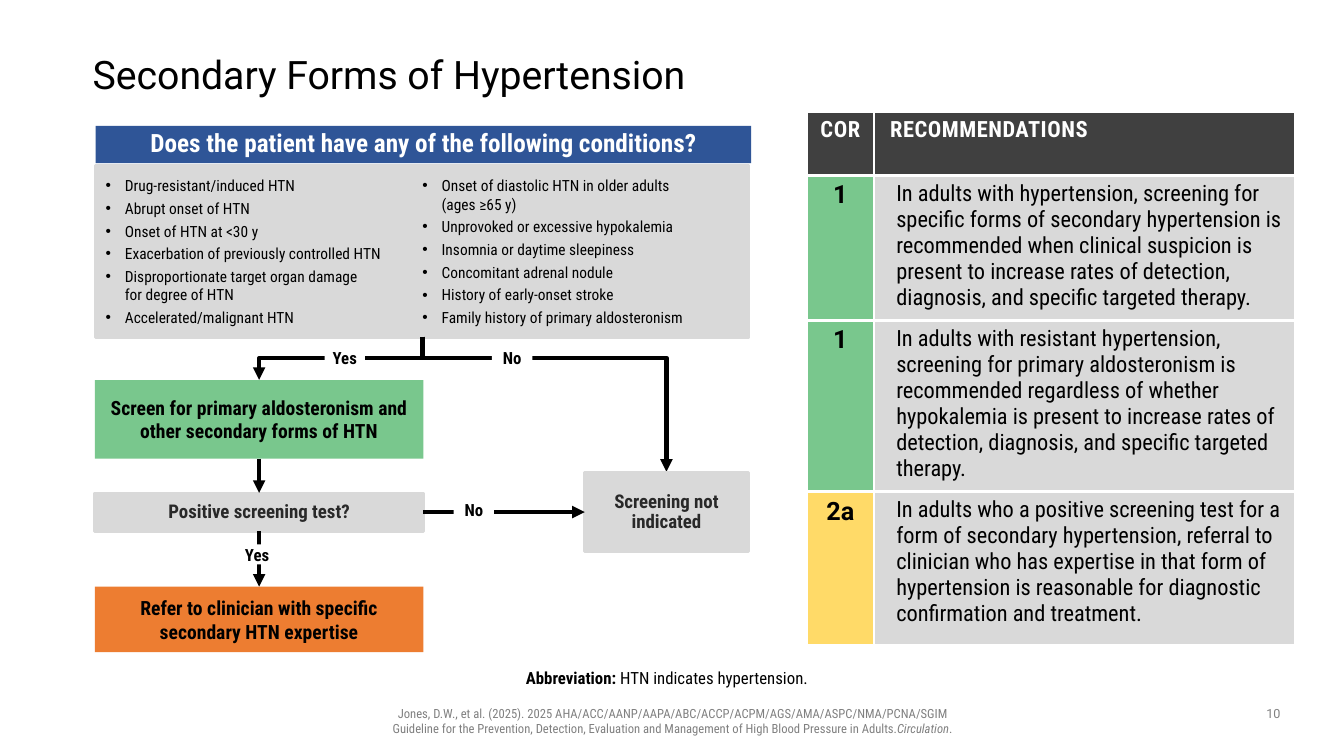
from lxml import etree
from pptx import Presentation
from pptx.dml.color import RGBColor
from pptx.enum import shapes, text
from pptx.oxml import ns
from pptx.util import Inches, Pt

COLORS = {
    "black": "000000", "white": "FFFFFF", "ink": "292929", "muted": "808080",
    "gray": "D9D9D9", "dark": "404040", "blue": "2F5597", "green": "79C78D",
    "orange": "ED7D31", "yellow": "FFDA68",
}
CENTER, LEFT = text.PP_ALIGN.CENTER, text.PP_ALIGN.LEFT
TOP, MIDDLE, BOTTOM = (text.MSO_ANCHOR.TOP, text.MSO_ANCHOR.MIDDLE,
                       text.MSO_ANCHOR.BOTTOM)
DEFAULT_INSETS = (0.1, 0.05, 0.1, 0.05)
NO_INSETS = (0, 0, 0, 0)


def color(name):
    return RGBColor.from_string(COLORS[name])


def add_xml(parent, tag, **attributes):
    return etree.SubElement(parent, ns.qn(tag), attributes)


class SlideBuilder:
    heading_font = "Roboto"
    body_font = "Roboto Condensed"

    def __init__(self, page):
        self.page = page

    def style(self, font, size, ink="black", bold=False, face=None):
        font.name = face or self.body_font
        font.size, font.bold = Pt(size), bold
        font.color.rgb = color(ink)

    def frame(self, frame, anchor=MIDDLE, insets=DEFAULT_INSETS):
        frame.word_wrap = True
        frame.vertical_anchor = anchor
        (frame.margin_left, frame.margin_top,
         frame.margin_right, frame.margin_bottom) = map(Inches, insets)

    def put_text(self, para, words, size, align=CENTER, spacing=None, **look):
        para.text = words
        para.alignment = align
        if spacing:
            para.line_spacing = spacing
        self.style(para.font, size, **look)

    def text_box(self, place, anchor=TOP, insets=DEFAULT_INSETS):
        box = self.page.shapes.add_textbox(*map(Inches, place))
        self.frame(box.text_frame, anchor, insets)
        return box.text_frame.paragraphs[0]

    def rectangle(self, place, fill, outline=False, anchor=MIDDLE,
                  insets=DEFAULT_INSETS):
        box = self.page.shapes.add_shape(
            shapes.MSO_SHAPE.RECTANGLE, *map(Inches, place))
        box.shadow.inherit = False
        box.fill.solid()
        box.fill.fore_color.rgb = color(fill)
        if outline:
            box.line.color.rgb = color(fill)
            box.line.width = Pt(2)
        else:
            box.line.fill.background()
        self.frame(box.text_frame, anchor, insets)
        return box

    def step(self, place, fill, words, size, spacing=None, outline=False,
             insets=DEFAULT_INSETS, anchor=MIDDLE, **look):
        box = self.rectangle(place, fill, outline, anchor, insets)
        self.put_text(box.text_frame.paragraphs[0], words, size,
                      spacing=spacing, bold=True, **look)
        return box

    def label(self, left, top, words):
        self.step((left, top, 0.4, 0.2), "white", words, 12,
                  insets=NO_INSETS, anchor=TOP)

    def bullets(self, box, items):
        frame = box.text_frame
        frame._txBody.bodyPr.set("numCol", "2")
        for index, item in enumerate(items):
            para = frame.add_paragraph() if index else frame.paragraphs[0]
            para.space_after = Pt(3)
            props = para._p.get_or_add_pPr()
            props.set("marL", str(Inches(0.19)))
            props.set("indent", str(-Inches(0.19)))
            add_xml(props, "a:buFont", typeface="Arial")
            add_xml(props, "a:buChar", char="•")
            self.put_text(para, item, 11, LEFT)

    def connector(self, kind, start, end):
        line = self.page.shapes.add_connector(
            kind, *map(Inches, (*start, *end)))
        line.line.color.rgb = color("black")
        line.line.width = Pt(3)
        add_xml(line.line._get_or_add_ln(), "a:tailEnd", type="triangle")
        add_xml(line._element.spPr, "a:effectLst")
        return line

    def arrow(self, source, source_side, target, target_side):
        line = self.connector(shapes.MSO_CONNECTOR.STRAIGHT, (0, 0), (1, 1))
        line.begin_connect(source, source_side)
        line.end_connect(target, target_side)

    def branch(self, start, end, bend):
        """Elbow that leaves downwards, runs sideways and ends downwards."""
        line = self.connector(shapes.MSO_CONNECTOR.ELBOW, start, end)
        run, drop = end[0] - start[0], end[1] - start[1]
        line.left = Inches((start[0] + end[0] - drop) / 2)
        line.top = Inches((start[1] + end[1] - abs(run)) / 2)
        line.width, line.height = Inches(drop), Inches(abs(run))
        properties = line._element.spPr
        frame = properties.find(ns.qn("a:xfrm"))
        for flip in ("flipH", "flipV"):
            frame.attrib.pop(flip, None)
        frame.set("rot", str((90 if run < 0 else 270) * 60000))
        if run > 0:
            frame.set("flipH", "1")
        guides = properties.find(".//" + ns.qn("a:avLst"))
        add_xml(guides, "a:gd", name="adj1", fmla=f"val {round(bend * 100000)}")

    def cell(self, cell, fill, words, size, indent=0, tracking=0,
             insets=(0.05,) * 4, **look):
        props = cell._tc.get_or_add_tcPr()
        for side in ("a:lnL", "a:lnR", "a:lnT", "a:lnB"):
            edge = add_xml(props, side, w=str(Pt(2.25)))
            paint = add_xml(edge, "a:solidFill")
            add_xml(paint, "a:srgbClr", val=COLORS["white"])
        cell.fill.solid()
        cell.fill.fore_color.rgb = color(fill)
        self.frame(cell.text_frame, MIDDLE, insets)
        para = cell.text_frame.paragraphs[0]
        self.put_text(para, words, size, **look)
        para._p.get_or_add_pPr().set("marL", str(Inches(indent)))
        if tracking:
            para.runs[0]._r.get_or_add_rPr().set("spc", str(tracking))

    def recommendations(self, place, widths, heights, rows):
        table = self.page.shapes.add_table(
            len(rows) + 1, 2, *map(Inches, place)).table
        table.first_row = table.horz_banding = False
        for column, width in zip(table.columns, widths):
            column.width = Inches(width)
        for row, height in zip(table.rows, heights):
            row.height = Inches(height)
        heading = dict(size=16, ink="white", bold=True,
                       insets=(0.1, 0.09, 0.1, 0.05))
        self.cell(table.cell(0, 0), "dark", "COR", tracking=50, **heading)
        self.cell(table.cell(0, 1), "dark", "RECOMMENDATIONS", indent=0.06,
                  tracking=40, align=LEFT, **heading)
        for index, (grade, fill, advice) in enumerate(rows, 1):
            self.cell(table.cell(index, 0), fill, grade, 18, bold=True,
                      face=self.heading_font)
            self.cell(table.cell(index, 1), "gray", advice, 16, indent=0.12,
                      align=LEFT)


CONDITIONS = [
    "Drug-resistant/induced HTN", "Abrupt onset of HTN", "Onset of HTN at <30 y",
    "Exacerbation of previously controlled HTN",
    "Disproportionate target organ damage\vfor degree of HTN",
    "Accelerated/malignant HTN",
    "Onset of diastolic HTN in older adults\v(ages ≥65 y)",
    "Unprovoked or excessive hypokalemia", "Insomnia or daytime sleepiness",
    "Concomitant adrenal nodule", "History of early-onset stroke",
    "Family history of primary aldosteronism",
]
ADVICE = [
    ("1", "green", "In adults with hypertension, screening for specific forms of secondary hypertension is recommended when clinical suspicion is present to increase rates of detection, diagnosis, and specific targeted therapy."),
    ("1", "green", "In adults with resistant hypertension, screening for primary aldosteronism is recommended regardless of whether hypokalemia is present to increase rates of detection, diagnosis, and specific targeted therapy."),
    ("2a", "yellow", "In adults who a positive screening test for a form of secondary hypertension, referral to clinician who has expertise in that form of hypertension is reasonable for diagnostic confirmation and treatment."),
]


def main():
    deck = Presentation()
    deck.slide_width, deck.slide_height = Inches(13.33), Inches(7.5)
    slide = SlideBuilder(deck.slides.add_slide(deck.slide_layouts[6]))

    # Title
    slide.put_text(slide.text_box((0.92, 0.4, 11.5, 0.72), MIDDLE, NO_INSETS),
                   "Secondary Forms of Hypertension", 28, LEFT, 0.9,
                   face=slide.heading_font)

    # Conditions
    conditions = slide.rectangle((0.95, 1.64, 6.48, 1.71), "gray", True,
                                 insets=(0.1,) * 4)
    slide.bullets(conditions, CONDITIONS)
    slide.step((0.95, 1.25, 6.5, 0.37), "blue",
               "Does the patient have any of the following conditions?", 18,
               0.9, insets=NO_INSETS, ink="white")

    # Flowchart
    slide.branch((4.19, 3.34), (2.57, 3.77), 0.5)
    slide.branch((4.19, 3.34), (6.61, 4.68), 0.158)
    screen = slide.step(
        (0.94, 3.77, 3.26, 0.78), "green",
        "Screen for primary aldosteronism and other secondary forms of HTN", 14)
    question = dict(size=13.5, spacing=0.9, outline=True, insets=NO_INSETS,
                    ink="ink")
    excluded = slide.step((5.8, 4.69, 1.62, 0.78), "gray",
                          "Screening not indicated", **question)
    positive = slide.step((0.94, 4.89, 3.26, 0.38), "gray",
                          "Positive screening test?", **question)
    refer = slide.step(
        (0.94, 5.82, 3.26, 0.65), "orange",
        "Refer to clinician with specific secondary HTN expertise", 14)
    slide.arrow(screen, 2, positive, 0)
    slide.arrow(positive, 2, refer, 0)
    slide.arrow(positive, 3, excluded, 1)
    for left, top, answer in [(3.22, 3.45, "Yes"), (4.88, 3.45, "No"),
                              (2.35, 5.4, "Yes"), (4.5, 4.96, "No")]:
        slide.label(left, top, answer)

    # Recommendations
    slide.recommendations((8, 1.11, 4.85, 5.29), (0.67, 4.18),
                          (0.63, 1.44, 1.7, 1.52), ADVICE)

    # Abbreviation, citation and page number
    note = slide.text_box((1.88, 6.42, 9.57, 0.46), BOTTOM, (0, 0.05, 0.1, 0.05))
    note.alignment, note.line_spacing = CENTER, 0.9
    for words, bold in [("Abbreviation: ", True),
                        ("HTN indicates hypertension.", False)]:
        span = note.add_run()
        span.text = words
        slide.style(span.font, 12, bold=bold)
    citation = slide.text_box((2.36, 6.95, 8.62, 0.4))
    slide.put_text(citation, "Jones, D.W., et al. (2025). 2025 AHA/ACC/AANP/AAPA/ABC/ACCP/ACPM/AGS/AMA/ASPC/NMA/PCNA/SGIM\vGuideline for the Prevention, Detection, Evaluation and Management of High Blood Pressure in Adults.", 9, ink="muted")
    for words, italic in [("Circulation", True), (".", False)]:
        span = citation.add_run()
        span.text, span.font.italic = words, italic
    slide.put_text(slide.text_box((12.42, 6.95, 0.42, 0.26)), "10", 9,
                   ink="muted", face=slide.heading_font)

    deck.save("out.pptx")


if __name__ == "__main__":
    main()
